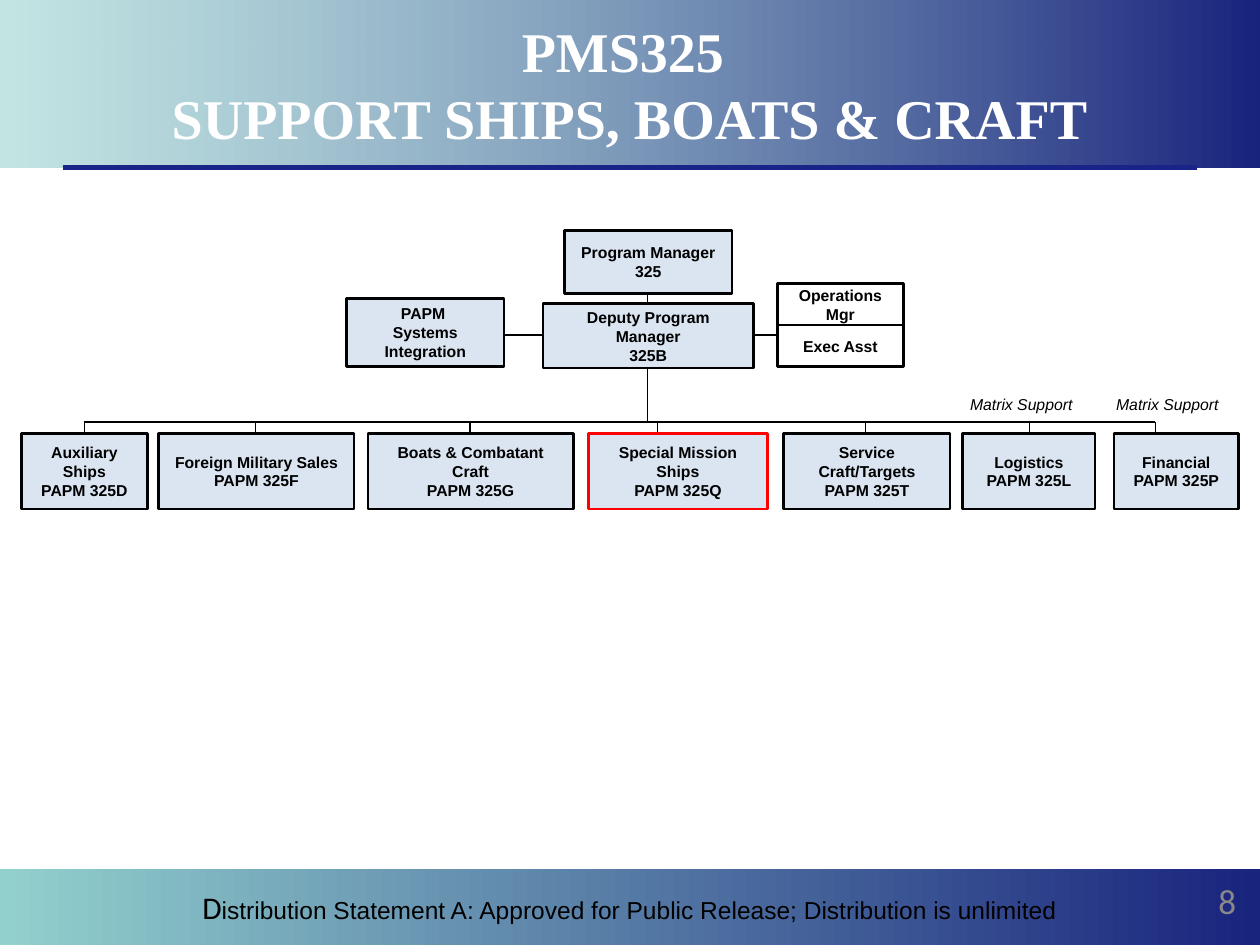
import pptx
import pptx.dml.color
import pptx.enum.shapes
import pptx.enum.text
import pptx.util
from lxml import etree

ALIGN = pptx.enum.text.PP_ALIGN
MIDDLE = pptx.enum.text.MSO_ANCHOR.MIDDLE
COLUMNS, ROWS = 100, 75
NAVY, TEAL, BLACK, WHITE = "19247D", "92D0CD", "000000", "FFFFFF"
PALE_BLUE, RED, GREY = "DAE5F1", "FF0000", "898989"


def rgb(value):
    return pptx.dml.color.RGBColor.from_string(value)


class OrgChart:
    """Current slide and its style; places are in columns and rows of the grid."""

    font = "Arial"
    label_size = 9
    border = 1.5

    def __init__(self, deck):
        self.deck = deck
        self.slide = deck.slides.add_slide(deck.slide_layouts[5])
        self.shapes = self.slide.shapes

    def place(self, left, top, width, height):
        across, down = self.deck.slide_width / COLUMNS, self.deck.slide_height / ROWS
        return [round(n) for n in (left * across, top * down, width * across, height * down)]

    def style(self, part, size, color=BLACK, font=None, bold=False, italic=False):
        """Format the font of a paragraph or run."""
        part.font.name = font or self.font
        part.font.size = pptx.util.Pt(size)
        part.font.bold, part.font.italic = bold, italic
        part.font.color.rgb = rgb(color)

    def rectangle(self, *place):
        shape = self.shapes.add_shape(
            pptx.enum.shapes.MSO_SHAPE.RECTANGLE, *self.place(*place))
        shape.shadow.inherit = False
        shape.text_frame.word_wrap = True
        shape.text_frame.vertical_anchor = MIDDLE
        return shape

    def band(self, top, height, start_opacity=100):
        band = self.rectangle(0, top, COLUMNS, height)
        band.line.fill.background()
        band.fill.gradient()
        band.fill.gradient_angle = 0
        for stop, color in zip(band.fill.gradient_stops, (TEAL, NAVY)):
            stop.color.rgb = rgb(color)
        if start_opacity < 100:
            start = band.element.find(".//" + pptx.oxml.ns.qn("a:srgbClr"))
            alpha = etree.SubElement(start, pptx.oxml.ns.qn("a:alpha"))
            alpha.set("val", str(start_opacity * 1000))
        return band

    def title(self, text):
        title = self.shapes.title
        title.left, title.top, title.width, title.height = self.place(5, 1, 90, 11.3)
        self.shapes.element.append(title.element)  # in front of the header band
        frame = title.text_frame
        frame.text = text
        frame.word_wrap = True
        frame.auto_size = pptx.enum.text.MSO_AUTO_SIZE.NONE
        frame.vertical_anchor = MIDDLE
        frame.paragraphs[0].alignment = ALIGN.CENTER
        self.style(frame.paragraphs[0], 32, WHITE, "Times New Roman", bold=True)

    def footer(self, band, *runs):
        statement = band.text_frame.paragraphs[0]
        statement.alignment = ALIGN.CENTER
        for text, size, font in runs:
            run = statement.add_run()
            run.text = text
            self.style(run, size, font=font)

    def box(self, place, text, fill=PALE_BLUE, outline=BLACK):
        box = self.rectangle(*place)
        box.fill.solid()
        box.fill.fore_color.rgb = rgb(fill)
        box.line.color.rgb = rgb(outline)
        box.line.width = pptx.util.Pt(self.border)
        box.text_frame.text = text
        for paragraph in box.text_frame.paragraphs:
            paragraph.alignment = ALIGN.CENTER
            self.style(paragraph, self.label_size, bold=True)

    def label(self, place, text, align=ALIGN.LEFT, anchor=pptx.enum.text.MSO_ANCHOR.TOP,
              **style):
        frame = self.shapes.add_textbox(*self.place(*place)).text_frame
        frame.word_wrap = True
        frame.vertical_anchor = anchor
        frame.text = text
        frame.paragraphs[0].alignment = align
        self.style(frame.paragraphs[0], **style)

    def line(self, x1, y1, x2, y2, width=0.75, color=BLACK):
        line = self.shapes.add_connector(
            pptx.enum.shapes.MSO_CONNECTOR.STRAIGHT, *self.place(x1, y1, x2, y2))
        line.line.width = pptx.util.Pt(width)
        line.line.color.rgb = rgb(color)
        etree.SubElement(line.element.spPr, pptx.oxml.ns.qn("a:effectLst"))


def main():
    deck = pptx.Presentation()
    deck.slide_width, deck.slide_height = pptx.util.Inches(10), pptx.util.Inches(7.5)
    chart = OrgChart(deck)

    chart.band(0, 13.3, start_opacity=55)
    chart.footer(
        chart.band(69, 6),
        ("D", 18, "Calibri"),
        ("istribution Statement A: Approved for Public Release; "
         "Distribution is unlimited", 14, "Arial"))
    chart.line(5, 13.3, 95, 13.3, width=3, color="192488")
    chart.label((75.8, 69.5, 23.3, 4), "8", ALIGN.RIGHT, MIDDLE,
                size=20, color=GREY, font="Calibri")
    chart.title("PMS325 \vSUPPORT SHIPS, BOATS & CRAFT")

    # Management: links first, so that the boxes cover their ends
    trunk, staff_row, bus, team_top = 51.4, 26.6, 33.5, 34.4
    chart.line(trunk, 23.3, trunk, bus)
    chart.line(58.3, staff_row, 63.3, staff_row)
    chart.line(43.3, staff_row, 38.3, staff_row)
    chart.box((44.8, 18.3, 13.3, 5), "Program Manager\n325")
    chart.box((43.1, 24.1, 16.7, 5.1), "Deputy Program Manager\n325B")
    chart.box((27.5, 23.7, 12.5, 5.4), "PAPM \nSystems Integration")
    for row, role in enumerate(("Operations Mgr", "Exec Asst")):
        chart.box((61.7, 22.5 + 3.3 * row, 10, 3.3), role, fill=WHITE)

    # Teams: left, width, stem, name, code letter, outline
    teams = [
        (1.7, 10, 6.7, "Auxiliary Ships", "D", BLACK),
        (12.6, 15.5, 20.3, "Foreign Military Sales", "F", BLACK),
        (29.2, 16.3, 37.3, "Boats & Combatant Craft", "G", BLACK),
        (46.7, 14.2, 52.2, "Special Mission Ships", "Q", RED),
        (62.2, 13.2, 68.7, "Service Craft/Targets", "T", BLACK),
        (76.4, 10.5, 81.7, "Logistics", "L", BLACK),
        (88.4, 9.9, 91.7, "Financial", "P", BLACK),
    ]
    chart.line(teams[0][2], bus, teams[-1][2], bus, width=1)
    for left, width, stem, name, code, outline in teams:
        chart.line(stem, bus, stem, team_top)
        chart.box((left, team_top, width, 6), f"{name}\nPAPM 325{code}", outline=outline)
    for left in (76, 87.6):
        chart.label((left, 30.8, 10.2, 2.5), "Matrix Support",
                    size=chart.label_size, italic=True)

    deck.save("out.pptx")


if __name__ == "__main__":
    main()
